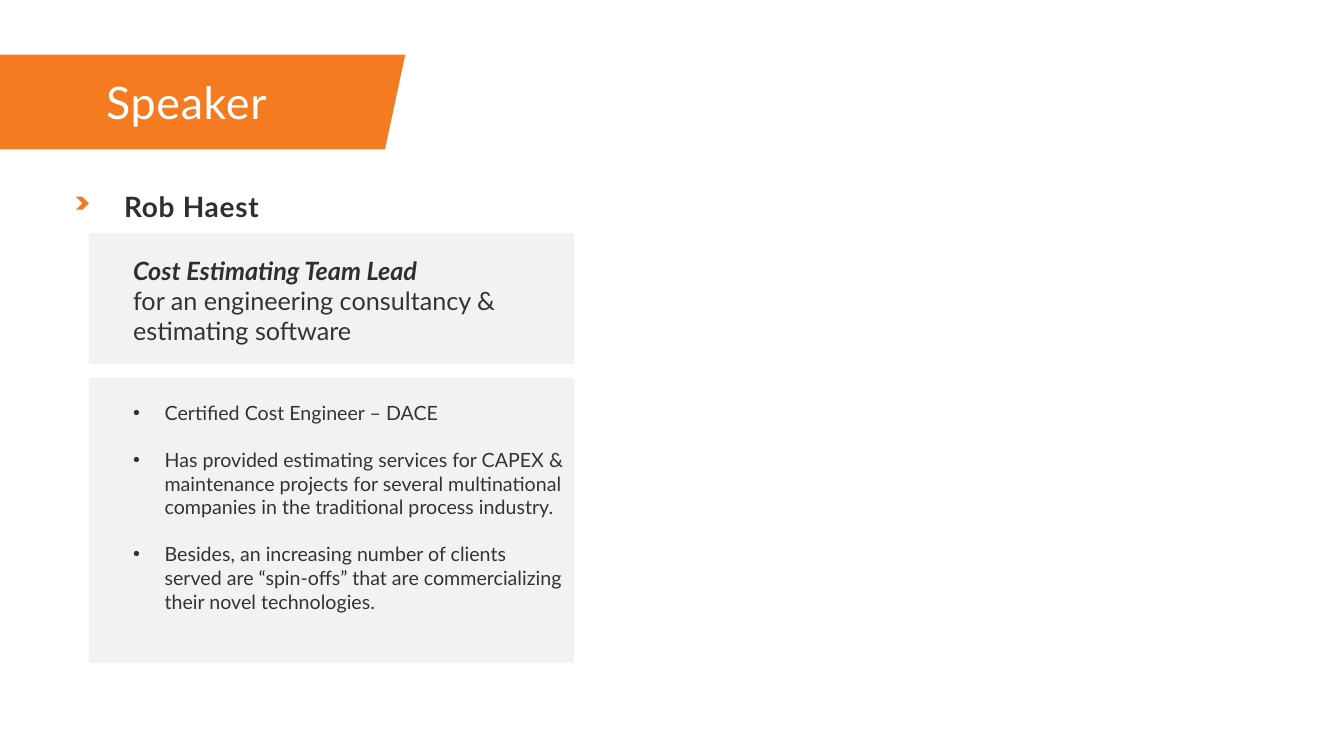
from dataclasses import dataclass

from lxml.etree import SubElement
from pptx import Presentation
from pptx.dml.color import RGBColor
from pptx.enum.shapes import MSO_SHAPE
from pptx.enum.text import MSO_ANCHOR, MSO_AUTO_SIZE, PP_ALIGN
from pptx.oxml.ns import qn
from pptx.shapes.base import BaseShape
from pptx.slide import Slide
from pptx.util import Pt


@dataclass(frozen=True)
class Theme:
    font: str = "Lato"
    orange: str = "F47B20"
    panel: str = "F2F2F2"
    white: str = "FFFFFF"
    dark: str = "2E2F33"
    grey: str = "333333"
    title: float = 32
    name: float = 20
    role: float = 18
    body: float = 14


@dataclass(frozen=True)
class Box:
    left: float
    top: float
    width: float
    height: float

    def place(self) -> tuple[Pt, Pt, Pt, Pt]:
        return Pt(self.left), Pt(self.top), Pt(self.width), Pt(self.height)


@dataclass(frozen=True)
class Block:
    kind: MSO_SHAPE
    box: Box
    fill: str


@dataclass(frozen=True)
class Line:
    text: str
    size: float
    color: str
    bold: bool = False
    slant: bool = False
    track: float = 0
    space: float = 0
    pitch: float = 1
    bullet: bool = False


@dataclass(frozen=True)
class Note:
    box: Box
    lines: tuple[Line, ...]


THEME = Theme()
INDENT = 22.5
GAP = THEME.body * 1.2  # one blank line between points

BANNER = ((-2, 39), (289.5, 39), (275, 106.75), (-2, 106.75))
TITLE = Note(Box(68.6, 39, 200, 67.75),
             (Line("Speaker", THEME.title, THEME.white, track=0.5),))

BLOCKS = (
    Block(MSO_SHAPE.RECTANGLE, Box(63.5, 270, 346.75, 203.75), THEME.panel),
    Block(MSO_SHAPE.RECTANGLE, Box(63.5, 166.5, 346.75, 93.5), THEME.panel),
    Block(MSO_SHAPE.CHEVRON, Box(54.25, 140.5, 9.25, 9.25), THEME.orange),
)

POINTS = (
    "Certified Cost Engineer – DACE",
    "Has provided estimating services for CAPEX & maintenance projects for "
    "several multinational companies in the traditional process industry.",
    "Besides, an increasing number of clients served are “spin-offs” that are "
    "commercializing their novel technologies.",
)

NOTES = (
    Note(Box(81.5, 119.5, 317.5, 45.5),
         (Line("Rob Haest", THEME.name, THEME.dark, bold=True, track=0.5,
               pitch=1.5),)),
    Note(Box(88, 178.5, 299.5, 94),
         (Line("Cost Estimating Team Lead", THEME.role, THEME.dark,
               bold=True, slant=True),
          Line("for an engineering consultancy & estimating software",
               THEME.role, THEME.grey))),
    Note(Box(88, 283, 321.75, 193.5),
         tuple(Line(text, THEME.body, THEME.grey, bullet=True,
                    space=GAP if i else 0)
               for i, text in enumerate(POINTS))),
)


def paint(shape: BaseShape, color: str) -> None:
    shape.shadow.inherit = False
    shape.fill.solid()
    shape.fill.fore_color.rgb = RGBColor.from_string(color)
    shape.line.fill.background()


def write(shape: BaseShape, lines: tuple[Line, ...]) -> None:
    frame = shape.text_frame
    frame.word_wrap = True
    frame.auto_size = MSO_AUTO_SIZE.NONE
    for i, line in enumerate(lines):
        para = frame.add_paragraph() if i else frame.paragraphs[0]
        para.alignment = PP_ALIGN.LEFT
        para.line_spacing = line.pitch
        para.space_before = Pt(line.space)
        if line.bullet:
            props = para._p.get_or_add_pPr()
            props.set("marL", str(Pt(INDENT)))
            props.set("indent", str(-Pt(INDENT)))
            SubElement(props, qn("a:buFont")).set("typeface", "Arial")
            SubElement(props, qn("a:buChar")).set("char", "•")
        run = para.add_run()
        run.text = line.text
        font = run.font
        font.name = THEME.font
        font.size = Pt(line.size)
        font.bold = line.bold
        font.italic = line.slant
        font.color.rgb = RGBColor.from_string(line.color)
        if line.track:
            run._r.get_or_add_rPr().set("spc", str(round(line.track * 100)))


def add_block(slide: Slide, block: Block) -> None:
    paint(slide.shapes.add_shape(block.kind, *block.box.place()), block.fill)


def add_note(slide: Slide, note: Note) -> None:
    write(slide.shapes.add_textbox(*note.box.place()), note.lines)


def add_title(slide: Slide) -> None:
    """Draw the banner and lift the title placeholder above it."""
    first, *rest = [(Pt(x), Pt(y)) for x, y in BANNER]
    pen = slide.shapes.build_freeform(*first)
    pen.add_line_segments(rest, close=True)
    banner = pen.convert_to_shape()
    paint(banner, THEME.orange)
    title = slide.shapes.title
    title.left, title.top, title.width, title.height = TITLE.box.place()
    title.text_frame.vertical_anchor = MSO_ANCHOR.MIDDLE
    write(title, TITLE.lines)
    banner.element.addnext(title.element)


def main() -> None:
    deck = Presentation()
    deck.slide_width, deck.slide_height = Pt(960), Pt(540)
    slide = deck.slides.add_slide(deck.slide_layouts[5])
    add_title(slide)
    for block in BLOCKS:
        add_block(slide, block)
    for note in NOTES:
        add_note(slide, note)
    deck.save("out.pptx")


if __name__ == "__main__":
    main()
